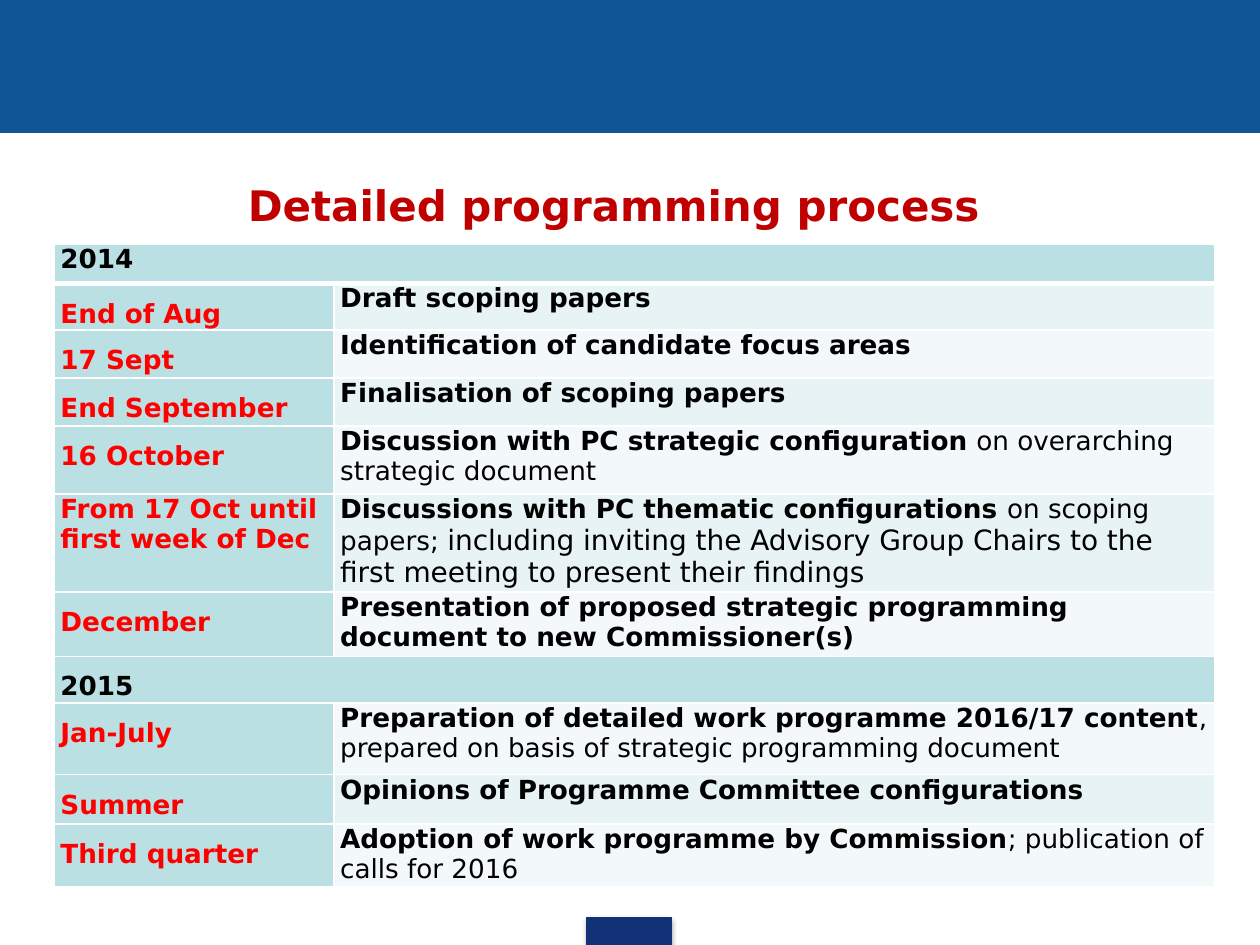
from dataclasses import dataclass

from lxml import etree
from pptx import Presentation
from pptx.dml.color import RGBColor
from pptx.enum.shapes import MSO_SHAPE
from pptx.enum.text import MSO_ANCHOR, PP_ALIGN
from pptx.oxml import parse_xml
from pptx.oxml.ns import nsdecls, qn
from pptx.util import Inches, Pt

RECTANGLE = MSO_SHAPE.RECTANGLE
MIDDLE = MSO_ANCHOR.MIDDLE
LEFT, CENTER, JUSTIFY = PP_ALIGN.LEFT, PP_ALIGN.CENTER, PP_ALIGN.JUSTIFY


@dataclass(frozen=True)
class Theme:
    font: str = "DejaVu Sans"
    title_size: float = 24
    body_size: float = 15
    large_size: float = 16
    title: str = "C00000"
    date: str = "FF0000"
    text: str = "000000"
    banner: str = "0F5494"
    tab: str = "133176"
    heading_fill: str = "BBE0E3"
    odd_fill: str = "E7F3F4"
    even_fill: str = "F3F9FA"
    border: str = "FFFFFF"


THEME = Theme()
COLUMN_WIDTHS = (2.22, 6.99)
PLAIN = {"bold": False}
LARGE = {"bold": False, "size": THEME.large_size}

SCHEDULE = [
    (0.31, "2014", None),
    (0.37, "End of Aug", [("Draft scoping papers", {})]),
    (0.38, "17 Sept", [("Identification of candidate focus areas", {})]),
    (0.38, "End September", [("Finalisation of scoping papers", {})]),
    (0.54, "16 October", [
        ("Discussion with PC strategic configuration", {}),
        (" on overarching strategic document", PLAIN)]),
    (0.78, "From 17 Oct until first week of Dec", [
        ("Discussions with PC thematic configurations ", {}),
        ("on scoping papers; ", PLAIN),
        ("including inviting the Advisory Group Chairs to the first meeting "
         "to present their findings", LARGE)]),
    (0.51, "December", [
        ("Presentation of proposed strategic programming document to new "
         "Commissioner(s)", {})]),
    (0.37, "2015", None),
    (0.57, "Jan-July", [
        ("Preparation of detailed work programme 2016/17 content", {}),
        (", prepared on basis of strategic programming document", PLAIN)]),
    (0.39, "Summer", [("Opinions of Programme Committee configurations", {})]),
    (0.5, "Third quarter", [
        ("Adoption of work programme by Commission", {}),
        ("; publication of calls for 2016", PLAIN)]),
]


def write_text(frame, segments, color=THEME.text, size=THEME.body_size,
               align=LEFT, line_spacing=None, space_after=0):
    frame.word_wrap = True
    paragraph = frame.paragraphs[0]
    paragraph.alignment = align
    paragraph.line_spacing = line_spacing
    paragraph.space_after = Pt(space_after)
    for words, style in segments:
        run = paragraph.add_run()
        run.text = words
        run.font.name = THEME.font
        run.font.size = Pt(style.get("size", size))
        run.font.bold = style.get("bold", True)
        run.font.color.rgb = RGBColor.from_string(color)
    return paragraph


def add_bar(slide, box, color):
    bar = slide.shapes.add_shape(RECTANGLE, *map(Inches, box))
    bar.shadow.inherit = False
    bar.fill.solid()
    bar.fill.fore_color.rgb = RGBColor.from_string(color)
    bar.line.color.rgb = RGBColor.from_string(color)
    bar.line.width = Pt(0.75)
    return bar


def add_footer_tab(slide, box):
    tab = add_bar(slide, box, THEME.tab)
    effects = tab._element.spPr.find(qn("a:effectLst"))
    effects.append(parse_xml(
        f'<a:outerShdw {nsdecls("a")} blurRad="{Pt(3.1)}" dist="{Pt(1.8)}" '
        'dir="5400000" rotWithShape="0"><a:srgbClr val="000000">'
        '<a:alpha val="35000"/></a:srgbClr></a:outerShdw>'))


def place_title(slide, box):
    title = slide.shapes.title
    title.left, title.top, title.width, title.height = map(Inches, box)
    title.text_frame.vertical_anchor = MIDDLE
    paragraph = write_text(
        title.text_frame, [("Detailed programming process ", {})],
        color=THEME.title, size=THEME.title_size, align=CENTER)
    properties = paragraph._p.get_or_add_pPr()
    properties.set("marL", str(Inches(0.39)))
    properties.set("indent", str(-Inches(0.39)))


def style_cell(cell, fill, bottom_width=1):
    cell.margin_left = cell.margin_right = Inches(0.05)
    cell.margin_top = cell.margin_bottom = 0
    properties = cell._tc.get_or_add_tcPr()
    for side, width in (("L", 1), ("R", 1), ("T", 1), ("B", bottom_width)):
        line = etree.SubElement(properties, qn(f"a:ln{side}"), w=str(Pt(width)))
        solid = etree.SubElement(line, qn("a:solidFill"))
        etree.SubElement(solid, qn("a:srgbClr"), val=THEME.border)
    cell.fill.solid()
    cell.fill.fore_color.rgb = RGBColor.from_string(fill)


def add_schedule(slide, box):
    table = slide.shapes.add_table(
        len(SCHEDULE), len(COLUMN_WIDTHS), *map(Inches, box)).table
    for column, width in zip(table.columns, COLUMN_WIDTHS):
        column.width = Inches(width)
    for index, (height, period, activity) in enumerate(SCHEDULE):
        table.rows[index].height = Inches(height)
        when, what = table.cell(index, 0), table.cell(index, 1)
        first = index == 0
        wraps = len(period) > 20
        bottom_width = 3 if first else 1
        spacing = None if first or wraps else 1.5
        style_cell(when, THEME.heading_fill, bottom_width)
        if activity is None:
            style_cell(what, THEME.heading_fill, bottom_width)
            when.merge(what)
            write_text(when.text_frame, [(period, {})], line_spacing=spacing,
                       space_after=0 if first else 6)
            continue
        style_cell(what, THEME.odd_fill if index % 2 else THEME.even_fill)
        write_text(when.text_frame, [(period, {})], color=THEME.date,
                   align=LEFT if wraps else JUSTIFY, line_spacing=spacing,
                   space_after=0 if period == "End September" else 6)
        write_text(what.text_frame, activity, space_after=6)


def main():
    deck = Presentation()
    deck.slide_width, deck.slide_height = Inches(10), Inches(7.5)
    slide = deck.slides.add_slide(deck.slide_layouts[5])
    add_bar(slide, (0, 0, 10, 1.05), THEME.banner)
    add_footer_tab(slide, (4.66, 7.28, 0.67, 0.22))
    place_title(slide, (0.43, 1.31, 9, 0.63))
    add_schedule(slide, (0.43, 1.94, sum(COLUMN_WIDTHS), 5.1))
    deck.save("out.pptx")


if __name__ == "__main__":
    main()
